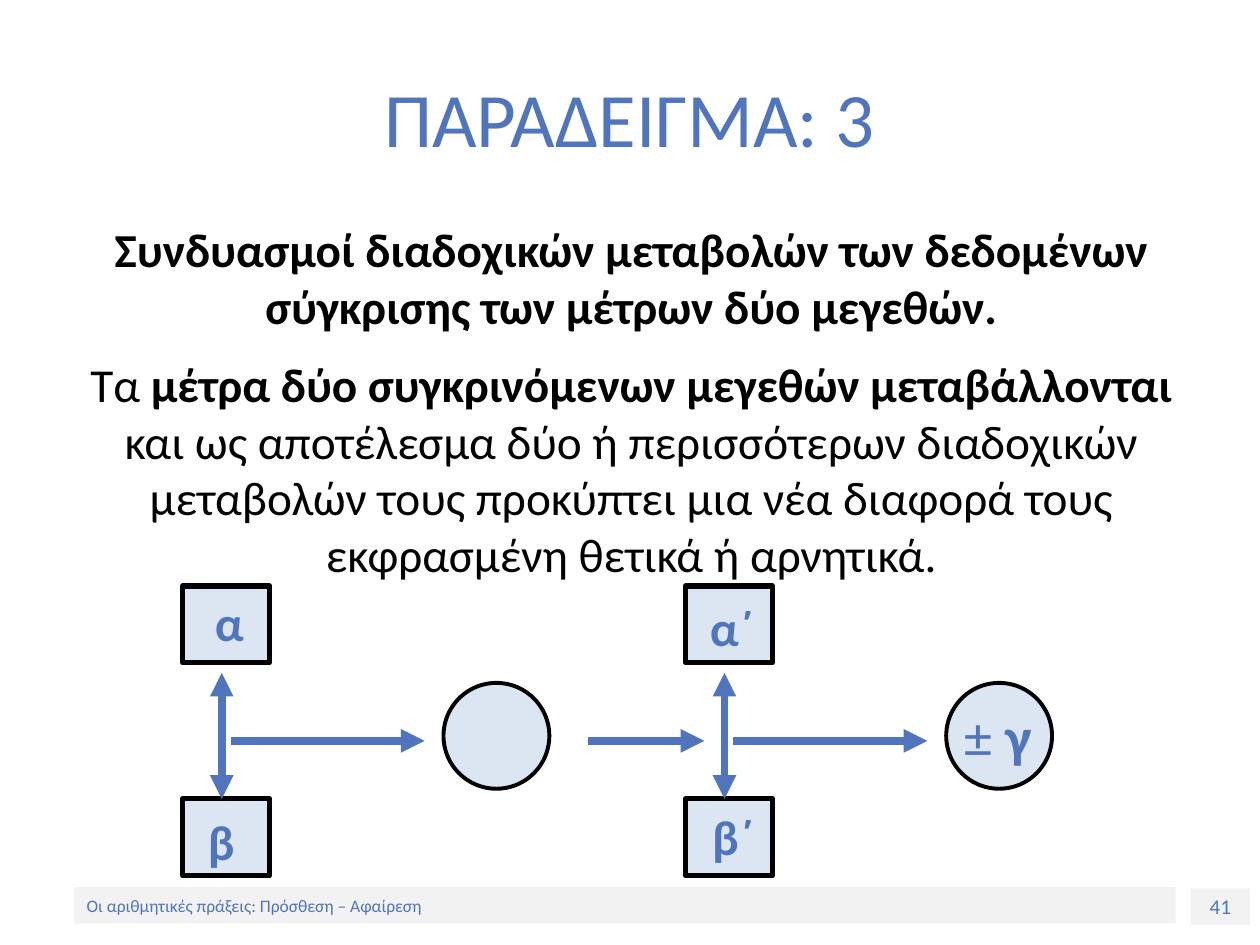
import dataclasses

import pptx
import pptx.dml.color
import pptx.enum.shapes
import pptx.enum.text
import pptx.oxml.ns
import pptx.util
from lxml import etree

Inches = pptx.util.Inches
Pt = pptx.util.Pt
SHAPE = pptx.enum.shapes.MSO_SHAPE
ALIGN = pptx.enum.text.PP_ALIGN
ANCHOR = pptx.enum.text.MSO_ANCHOR
qn = pptx.oxml.ns.qn

BLUE, PALE, GREY, BLACK = "5075BC", "DCE6F2", "F2F2F2", "000000"
SIDE_WIDTH, SIDE_HEIGHT = 0.69, 0.61
TOP_Y, BOTTOM_Y, AXIS_Y = 4.65, 6.34, 5.88


@dataclasses.dataclass
class Span:
    text: str
    bold: bool = False


@dataclasses.dataclass
class Label:
    left: float
    top: float
    width: float
    height: float
    spans: list[Span]
    size: float = 28


@dataclasses.dataclass
class Comparison:
    left: float
    labels: list[Label]


def colour(value: str) -> pptx.dml.color.RGBColor:
    return pptx.dml.color.RGBColor.from_string(value)


def place(shape, left: float, top: float, width: float, height: float) -> None:
    shape.left, shape.top = Inches(left), Inches(top)
    shape.width, shape.height = Inches(width), Inches(height)


def write(para, spans: list[Span], size: float, ink: str = BLUE, align=ALIGN.CENTER) -> None:
    para.alignment = align
    for span in spans:
        run = para.add_run()
        run.text = span.text
        run.font.name = "Calibri"
        run.font.size = Pt(size)
        run.font.bold = span.bold
        run.font.color.rgb = colour(ink)


def draw_shape(page, kind, left: float, top: float, width: float, height: float,
               fill: str, line_width: float = 0):
    shape = page.shapes.add_shape(kind, Inches(left), Inches(top), Inches(width), Inches(height))
    shape.shadow.inherit = False
    shape.fill.solid()
    shape.fill.fore_color.rgb = colour(fill)
    if line_width:
        shape.line.color.rgb = colour(BLACK)
        shape.line.width = Pt(line_width)
    else:
        shape.line.fill.background()
    return shape


def draw_arrow(page, start: tuple[float, float], end: tuple[float, float],
               both_ends: bool = False) -> None:
    arrow = page.shapes.add_connector(
        pptx.enum.shapes.MSO_CONNECTOR.STRAIGHT, *map(Inches, start + end))
    arrow.line.color.rgb = colour(BLUE)
    arrow.line.width = Pt(4.5)
    line = arrow.line._get_or_add_ln()
    for tag in ["a:headEnd", "a:tailEnd"] if both_ends else ["a:tailEnd"]:
        etree.SubElement(line, qn(tag), type="triangle")
    etree.SubElement(arrow._element.spPr, qn("a:effectLst"))


def draw_label(page, label: Label) -> None:
    box = page.shapes.add_textbox(0, 0, 0, 0)
    place(box, label.left, label.top, label.width, label.height)
    box.text_frame.word_wrap = True
    write(box.text_frame.paragraphs[0], label.spans, label.size)


def draw_comparison(page, group: Comparison) -> None:
    left = group.left
    draw_shape(page, SHAPE.OVAL, left + 2.07, 5.42, 0.84, 0.84, PALE, 2.25)
    for top in (TOP_Y, BOTTOM_Y):
        draw_shape(page, SHAPE.RECTANGLE, left, top, SIDE_WIDTH, SIDE_HEIGHT, PALE, 3)
    draw_arrow(page, (left + 0.38, AXIS_Y), (left + 1.92, AXIS_Y))
    draw_arrow(page, (left + 0.31, BOTTOM_Y), (left + 0.31, 5.34), both_ends=True)
    for label in group.labels:
        draw_label(page, label)


def draw_footer(page, text: str, left: float, top: float, width: float,
                size: float, align) -> None:
    bar = draw_shape(page, SHAPE.RECTANGLE, left, top, width, 0.29, GREY)
    bar.text_frame.vertical_anchor = ANCHOR.MIDDLE
    write(bar.text_frame.paragraphs[0], [Span(text)], size, align=align)


BODY = [
    [Span("Συνδυασμοί διαδοχικών μεταβολών των δεδομένων σύγκρισης των μέτρων δύο μεγεθών.", True)],
    [Span("Τα "),
     Span("μέτρα δύο συγκρινόμενων μεγεθών μεταβάλλονται ", True),
     Span("και ως αποτέλεσμα δύο ή περισσότερων διαδοχικών μεταβολών τους "
          "προκύπτει μια νέα διαφορά τους εκφρασμένη θετικά ή αρνητικά.")],
]
COMPARISONS = [
    Comparison(1.45, [
        Label(1.53, 4.65, 0.58, 0.59, [Span("α", True)]),
        Label(1.22, 6.39, 1.07, 0.59, [Span("β", True)]),
    ]),
    Comparison(5.44, [
        Label(5.52, 4.69, 0.58, 0.59, [Span("α΄", True)]),
        Label(5.49, 6.35, 0.66, 0.59, [Span("β΄", True)]),
        Label(7.46, 5.52, 0.92, 0.66, [Span("± "), Span("γ", True)], 32),
    ]),
]


def main() -> None:
    deck = pptx.Presentation()
    deck.slide_width, deck.slide_height = Inches(10), Inches(7.5)
    page = deck.slides.add_slide(deck.slide_layouts[1])

    # Footer bar and page number
    draw_footer(page, "41", 9.45, 7.05, 0.47, 12, ALIGN.CENTER)
    draw_footer(page, "Οι αριθμητικές πράξεις: Πρόσθεση – Αφαίρεση",
                0.59, 7.04, 8.74, 10, ALIGN.LEFT)

    # Title
    title = page.shapes.title
    place(title, 0.5, 0.3, 9, 1.25)
    title.text_frame.vertical_anchor = ANCHOR.MIDDLE
    write(title.text_frame.paragraphs[0], [Span("ΠΑΡΑΔΕΙΓΜΑ: 3")], 44)

    # Body text without bullets
    body = page.placeholders[1]
    place(body, 0.51, 1.7, 9, 5.43)
    frame = body.text_frame
    frame.auto_size = pptx.enum.text.MSO_AUTO_SIZE.NONE
    for index, spans in enumerate(BODY):
        para = frame.add_paragraph() if index else frame.paragraphs[0]
        write(para, spans, 27, BLACK)
        para.space_before = Pt(12)
        properties = para._p.get_or_add_pPr()
        properties.set("marL", "0")
        properties.set("indent", "0")
        etree.SubElement(properties, qn("a:buNone"))

    # Two comparisons and the arrow that leads from one to the other
    for group in COMPARISONS:
        draw_comparison(page, group)
    draw_arrow(page, (4.67, AXIS_Y), (5.59, AXIS_Y))

    deck.save("out.pptx")


if __name__ == "__main__":
    main()
